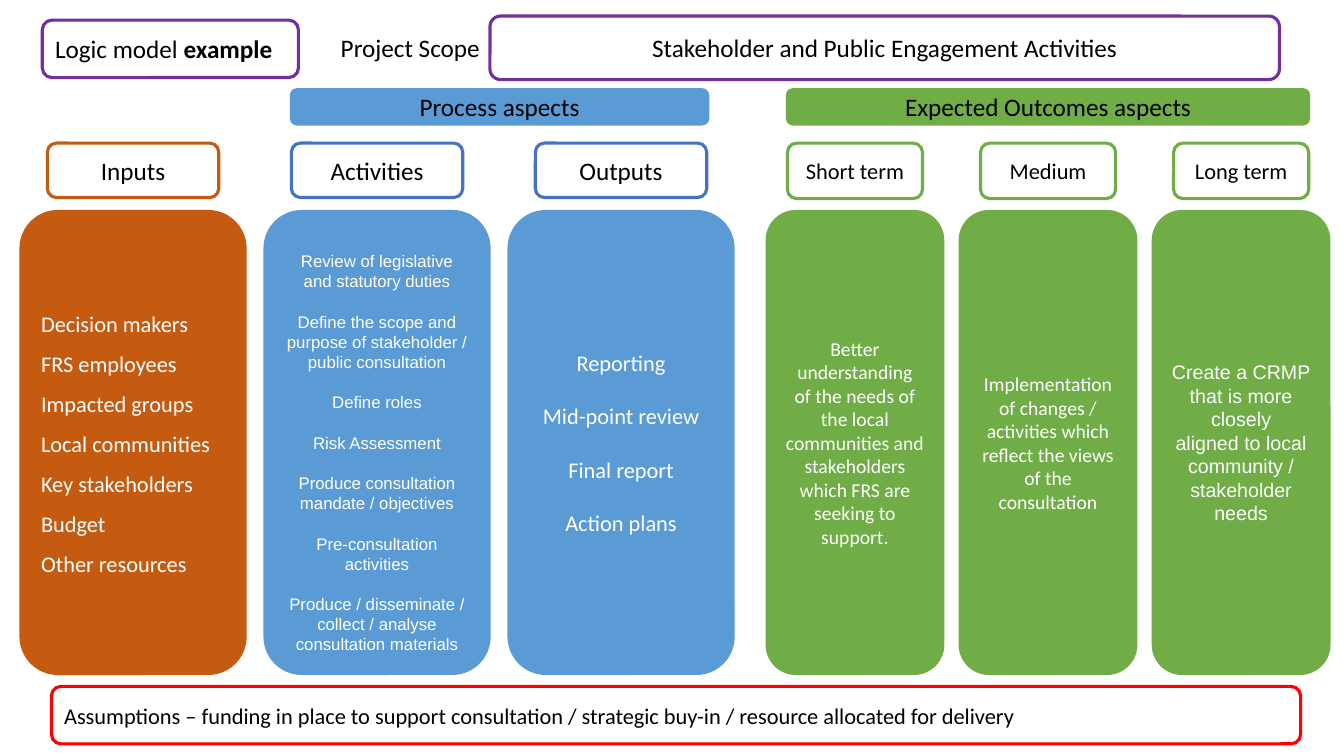
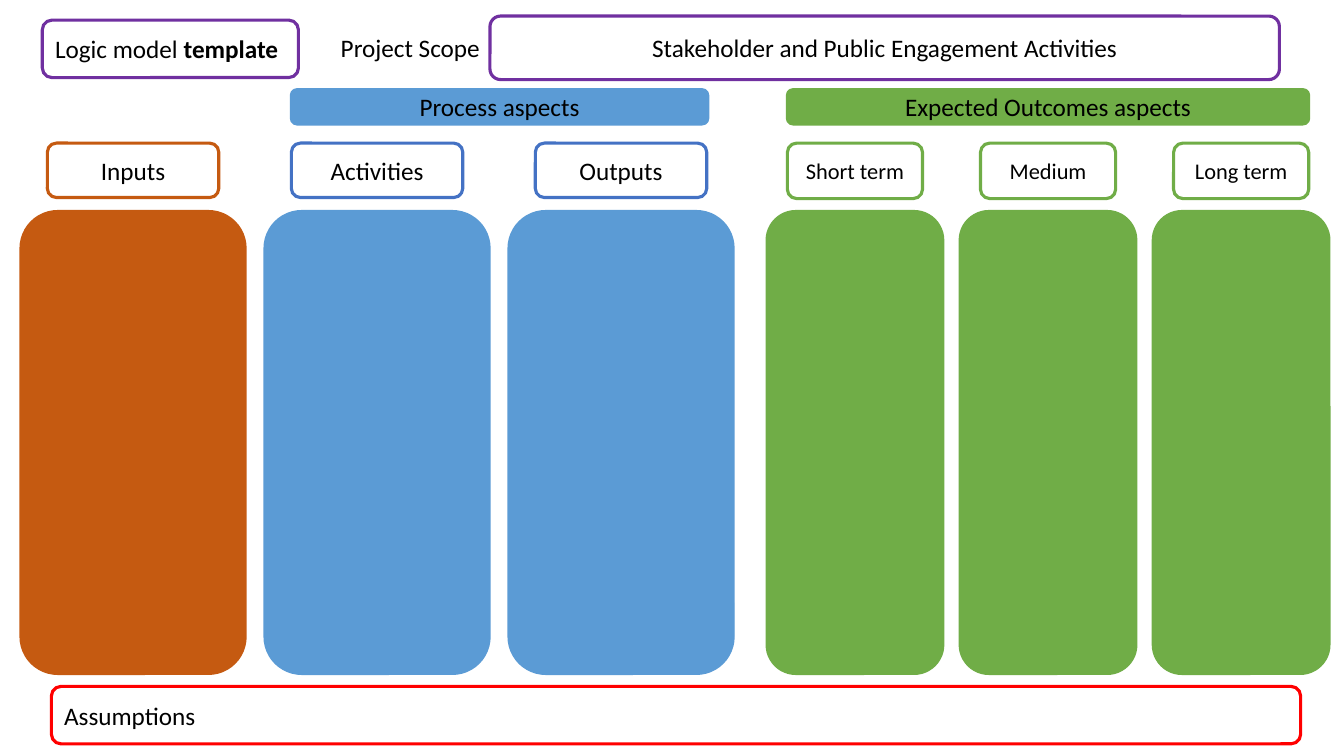
from dataclasses import dataclass

from pptx import Presentation
from pptx.dml.color import RGBColor
from pptx.enum.shapes import MSO_SHAPE
from pptx.enum.text import MSO_ANCHOR, PP_ALIGN
from pptx.util import Inches, Pt

PURPLE, ORANGE, RED = "7030A0", "C55A11", "FF0000"
BLUE, DARK_BLUE, GREEN = "5B9BD5", "4472C4", "70AD47"
WHITE, BLACK = "FFFFFF", "000000"

COLUMN_TOP, COLUMN_HEIGHT = 2.09, 4.6
HEADER_TOP = 1.42


@dataclass(frozen=True)
class Area:
    left: float
    top: float
    width: float
    height: float

    def lengths(self) -> tuple:
        return tuple(Inches(n) for n in (self.left, self.top, self.width, self.height))


@dataclass(frozen=True)
class Family:
    """Columns of equal size and pitch with headers centred above them."""
    left: float
    pitch: float
    width: float
    header_width: float
    header_height: float
    header_size: int


@dataclass(frozen=True)
class Column:
    title: str
    family: Family
    position: int
    fill: str
    header_line: str
    lines: tuple[str, ...]
    size: int
    font: str = "Calibri"
    align: PP_ALIGN = PP_ALIGN.CENTER
    gap: float = 0
    spacing: float | Pt = 1.0
    top_inset: float = 0.05

    def area(self) -> Area:
        left = self.family.left + self.position * self.family.pitch
        return Area(left, COLUMN_TOP, self.family.width, COLUMN_HEIGHT)

    def header_area(self) -> Area:
        column, family = self.area(), self.family
        left = column.left + (column.width - family.header_width) / 2
        return Area(left, HEADER_TOP, family.header_width, family.header_height)


@dataclass(frozen=True)
class Version:
    name: str
    assumptions: str
    assumptions_size: int
    filled: bool


WIDE = Family(0.2, 2.42, 2.24, 1.7, 0.54, 18)
NARROW = Family(7.6, 1.915, 1.76, 1.34, 0.55, 16)

COLUMNS = (
    Column("Inputs", WIDE, 0, ORANGE, ORANGE,
           ("Decision makers", "FRS employees", "Impacted groups", "Local communities",
            "Key stakeholders", "Budget", "Other resources"),
           16, align=PP_ALIGN.LEFT, gap=8, spacing=1.07),
    Column("Activities", WIDE, 1, BLUE, DARK_BLUE,
           ("Review of legislative and statutory duties",
            "Define the scope and purpose of stakeholder / public consultation",
            "Define roles", "Risk Assessment",
            "Produce consultation mandate / objectives",
            "Pre-consultation activities",
            "Produce / disseminate / collect / analyse consultation materials"),
           12, font="Arial", gap=14.4, spacing=Pt(14.4), top_inset=0.25),
    Column("Outputs", WIDE, 2, BLUE, DARK_BLUE,
           ("Reporting", "Mid-point review", "Final report", "Action plans"),
           16, gap=18.9),
    Column("Short term", NARROW, 0, GREEN, GREEN,
           ("Better understanding",
            "of the needs of the local communities and stakeholders "
            "which FRS are seeking to support."), 14),
    Column("Medium", NARROW, 1, GREEN, GREEN,
           ("Implementation of changes / activities which reflect "
            "the views of the consultation",), 14),
    Column("Long term", NARROW, 2, GREEN, GREEN,
           ("Create a CRMP that is more closely",
            "aligned to local community / stakeholder needs"),
           14, font="Arial", spacing=Pt(16.8)),
)

VERSIONS = (
    Version("example", "Assumptions – funding in place to support consultation / "
            "strategic buy-in / resource allocated for delivery", 16, True),
    Version("template", "Assumptions", 18, False),
)


def colour(value: str) -> RGBColor:
    return RGBColor.from_string(value)


def write(shape, *lines: str, size: int = 18, font: str = "Calibri", ink: str = BLACK,
          align: PP_ALIGN = PP_ALIGN.CENTER, anchor: MSO_ANCHOR = MSO_ANCHOR.MIDDLE,
          gap: float = 0, spacing: float | Pt = 1.0, top_inset: float = 0.05,
          bold_ending: str = "") -> None:
    """Put one paragraph per line into a shape; gap is the space between them."""
    frame = shape.text_frame
    frame.word_wrap = True
    frame.vertical_anchor = anchor
    frame.margin_top = Inches(top_inset)
    for index, line in enumerate(lines):
        para = frame.paragraphs[0] if index == 0 else frame.add_paragraph()
        para.alignment = align
        para.line_spacing = spacing
        para.space_after = Pt(gap if index < len(lines) - 1 else 0)
        for text, bold in ((line, False), (bold_ending, True)):
            if text:
                span = para.add_run()
                span.text = text
                span.font.size = Pt(size)
                span.font.name = font
                span.font.bold = bold
                span.font.color.rgb = colour(ink)


def add_box(page, area: Area, line: str, fill: str | None = None, weight: float = 2.25):
    box = page.shapes.add_shape(MSO_SHAPE.ROUNDED_RECTANGLE, *area.lengths())
    box.shadow.inherit = False
    if fill:
        box.fill.solid()
        box.fill.fore_color.rgb = colour(fill)
    else:
        box.fill.background()
    box.line.color.rgb = colour(line)
    box.line.width = Pt(weight)
    return box


def add_column(page, column: Column, filled: bool) -> None:
    header = add_box(page, column.header_area(), column.header_line, WHITE)
    write(header, column.title, size=column.family.header_size)
    body = add_box(page, column.area(), column.fill, column.fill, weight=1)
    if filled:
        write(body, *column.lines, size=column.size, font=column.font, ink=WHITE,
              align=column.align, gap=column.gap, spacing=column.spacing,
              top_inset=column.top_inset)


def add_page(deck, version: Version) -> None:
    page = deck.slides.add_slide(deck.slide_layouts[6])

    # Title row
    scope = add_box(page, Area(4.86, 0.16, 7.83, 0.63), PURPLE)
    write(scope, "Stakeholder and Public Engagement Activities")
    label = page.shapes.add_textbox(*Area(3.2, 0.27, 1.74, 0.4).lengths())
    write(label, "Project Scope", anchor=MSO_ANCHOR.TOP)
    title = add_box(page, Area(0.42, 0.2, 2.54, 0.57), PURPLE)
    write(title, "Logic model ", bold_ending=version.name, align=PP_ALIGN.LEFT)

    # Bands over the column groups
    for text, left, width, fill in (("Process aspects", 2.89, 4.13, BLUE),
                                    ("Expected Outcomes aspects", 7.81, 5.17, GREEN)):
        write(add_box(page, Area(left, 0.89, width, 0.34), fill, fill), text)

    # Columns with their headers
    for column in COLUMNS:
        add_column(page, column, version.filled)

    # Footer
    footer = add_box(page, Area(0.51, 6.81, 12.39, 0.57), RED)
    write(footer, version.assumptions, size=version.assumptions_size, align=PP_ALIGN.LEFT)


def main() -> None:
    deck = Presentation()
    deck.slide_width, deck.slide_height = Inches(13.33), Inches(7.5)
    for version in VERSIONS:
        add_page(deck, version)
    deck.save("out.pptx")


if __name__ == "__main__":
    main()
